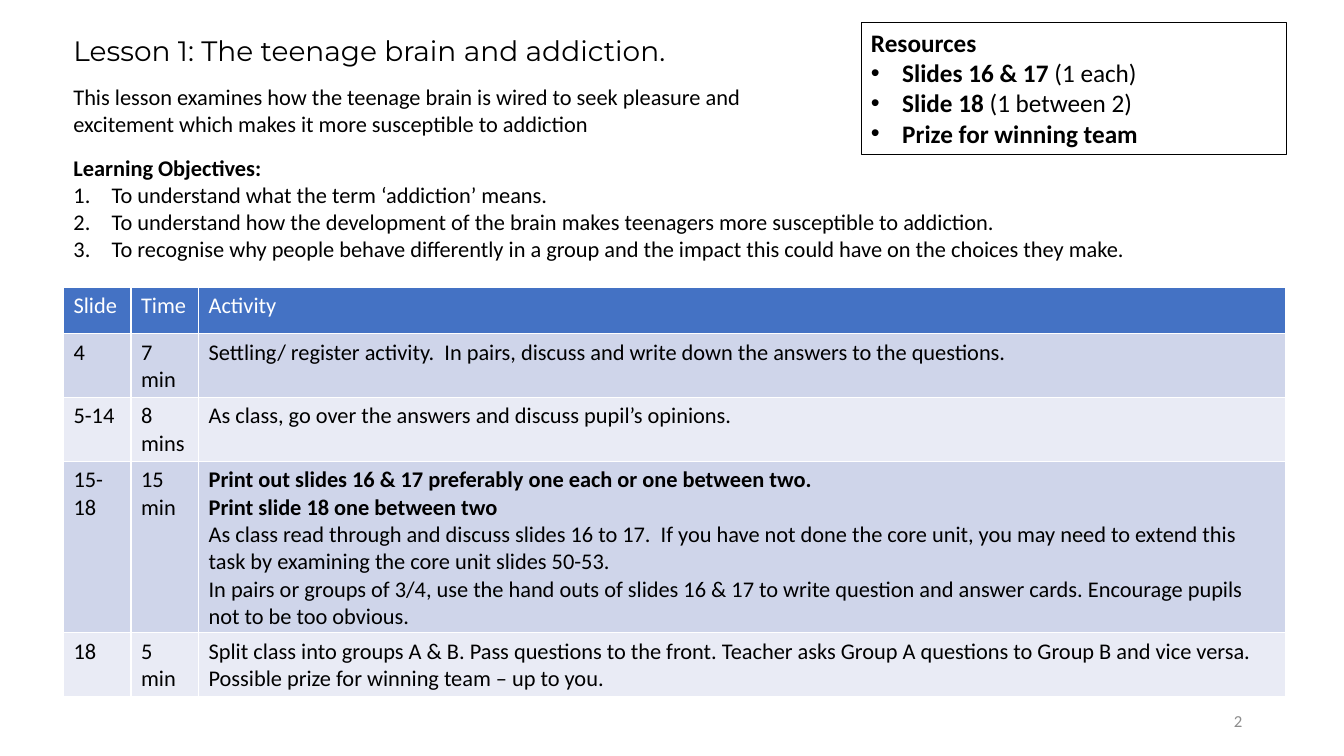
import pptx
import pptx.dml.color
import pptx.enum.shapes
import pptx.enum.text
import pptx.oxml
import pptx.oxml.ns
import pptx.util
from pptx.util import Inches

NS = pptx.oxml.ns.nsdecls("a")
BULLET = '<a:buChar %s char="•"/>' % NS
NUMBER = '<a:buAutoNum %s type="arabicPeriod"/>' % NS


def rgb(value):
    return pptx.dml.color.RGBColor.from_string(value)


def write(tf, paragraphs, size, color="000000", font="Calibri", marker=None, indent=0.0):
    """Fill a text frame from lists of (text, bold) runs; the marker skips the first paragraph."""
    tf.word_wrap = True
    for i, runs in enumerate(paragraphs):
        p = tf.paragraphs[0] if i == 0 else tf.add_paragraph()
        p.alignment = pptx.enum.text.PP_ALIGN.LEFT
        for text, bold in runs:
            r = p.add_run()
            r.text = text
            r.font.name = font
            r.font.size = pptx.util.Pt(size)
            r.font.bold = bold
            r.font.color.rgb = rgb(color)
        if marker and i > 0:
            pPr = p._p.get_or_add_pPr()
            pPr.set("marL", str(Inches(indent)))
            pPr.set("indent", str(-Inches(indent)))
            pPr.append(pptx.oxml.parse_xml('<a:buFont %s typeface="Arial"/>' % NS
                                           if marker == BULLET else
                                           '<a:buFont %s typeface="+mj-lt"/>' % NS))
            pPr.append(pptx.oxml.parse_xml(marker))


prs = pptx.Presentation()
prs.slide_width = Inches(13.33)
prs.slide_height = Inches(7.5)
s = prs.slides.add_slide(prs.slide_layouts[6])
left = Inches(0.63)

# Title and introduction
title = s.shapes.add_textbox(left, Inches(0.28), Inches(7.55), Inches(0.44))
write(title.text_frame, [[("Lesson 1: The teenage brain and addiction.", False)]],
      20, font="Montserrat")

intro = s.shapes.add_textbox(left, Inches(0.78), Inches(7.7), Inches(0.64))
write(intro.text_frame, [[(
    "This lesson examines how the teenage brain is wired to seek pleasure and "
    "excitement which makes it more susceptible to addiction", False)]], 16)

# Learning objectives
objectives = s.shapes.add_textbox(left, Inches(1.48), Inches(10.75), Inches(1.18))
write(objectives.text_frame, [
    [("Learning Objectives:", True)],
    [("To understand what the term ‘addiction’ means.", False)],
    [("To understand how the development of the brain makes teenagers more "
      "susceptible to addiction.", False)],
    [("To recognise why people behave differently in a group and the impact this "
      "could have on the choices they make.", False)],
], 16, marker=NUMBER, indent=0.38)

# Resources box
resources = s.shapes.add_shape(pptx.enum.shapes.MSO_SHAPE.RECTANGLE,
                               Inches(8.54), Inches(0.22), Inches(4.22), Inches(1.31))
resources.shadow.inherit = False
resources.fill.background()
resources.line.color.rgb = rgb("000000")
resources.line.width = pptx.util.Pt(0.75)
resources.text_frame.vertical_anchor = pptx.enum.text.MSO_ANCHOR.TOP
write(resources.text_frame, [
    [("Resources", True)],
    [("Slides 16 & 17 ", True), ("(1 each)", False)],
    [("Slide 18 ", True), ("(1 between 2)", False)],
    [("Prize for winning team", True)],
], 18, marker=BULLET, indent=0.31)

# Lesson plan table: each cell is a list of (text, bold) paragraphs
plan = [
    ("Slide", "Time", [("Activity", False)]),
    ("4", "7 min", [("Settling/ register activity.  In pairs, discuss and write down "
                     "the answers to the questions.", False)]),
    ("5-14", "8 mins", [("As class, go over the answers and discuss pupil’s opinions.",
                         False)]),
    ("15-18", "15 min", [
        ("Print out slides 16 & 17 preferably one each or one between two.", True),
        ("Print slide 18 one between two", True),
        ("As class read through and discuss slides 16 to 17.  If you have not done the "
         "core unit, you may need to extend this task by examining the core unit "
         "slides 50-53.", False),
        ("In pairs or groups of 3/4, use the hand outs of slides 16 & 17 to write "
         "question and answer cards. Encourage pupils not to be too obvious.", False)]),
    ("18", "5 min", [("Split class into groups A & B. Pass questions to the front. Teacher "
                      "asks Group A questions to Group B and vice versa. Possible prize "
                      "for winning team – up to you.", False)]),
]
widths = [0.67, 0.67, 10.78]
heights = [0.46, 0.63, 0.63, 1.7, 0.63]
table = s.shapes.add_table(len(plan), len(widths), left, Inches(2.85),
                           Inches(sum(widths)), Inches(sum(heights))).table
for column, width in zip(table.columns, widths):
    column.width = Inches(width)
for row, height in zip(table.rows, heights):
    row.height = Inches(height)

for i, (slides, time, activity) in enumerate(plan):
    fill = "4472C4" if i == 0 else ("E9EBF5", "CFD5EA")[i % 2]
    for j, lines in enumerate(([(slides, False)], [(time, False)], activity)):
        cell = table.cell(i, j)
        tcPr = cell._tc.get_or_add_tcPr()
        for side in ("lnL", "lnR", "lnT", "lnB"):
            tcPr.append(pptx.oxml.parse_xml(
                '<a:%s %s w="12700"><a:solidFill><a:srgbClr val="FFFFFF"/></a:solidFill>'
                '</a:%s>' % (side, NS, side)))
        cell.fill.solid()
        cell.fill.fore_color.rgb = rgb(fill)
        write(cell.text_frame, [[line] for line in lines], 16,
              "FFFFFF" if i == 0 else "000000")

# Slide number
number = s.shapes.add_textbox(Inches(9.42), Inches(6.95), Inches(3), Inches(0.4))
write(number.text_frame, [[("2", False)]], 12, "8C8C8C")
number.text_frame.vertical_anchor = pptx.enum.text.MSO_ANCHOR.MIDDLE
number.text_frame.paragraphs[0].alignment = pptx.enum.text.PP_ALIGN.RIGHT

prs.save("out.pptx")
